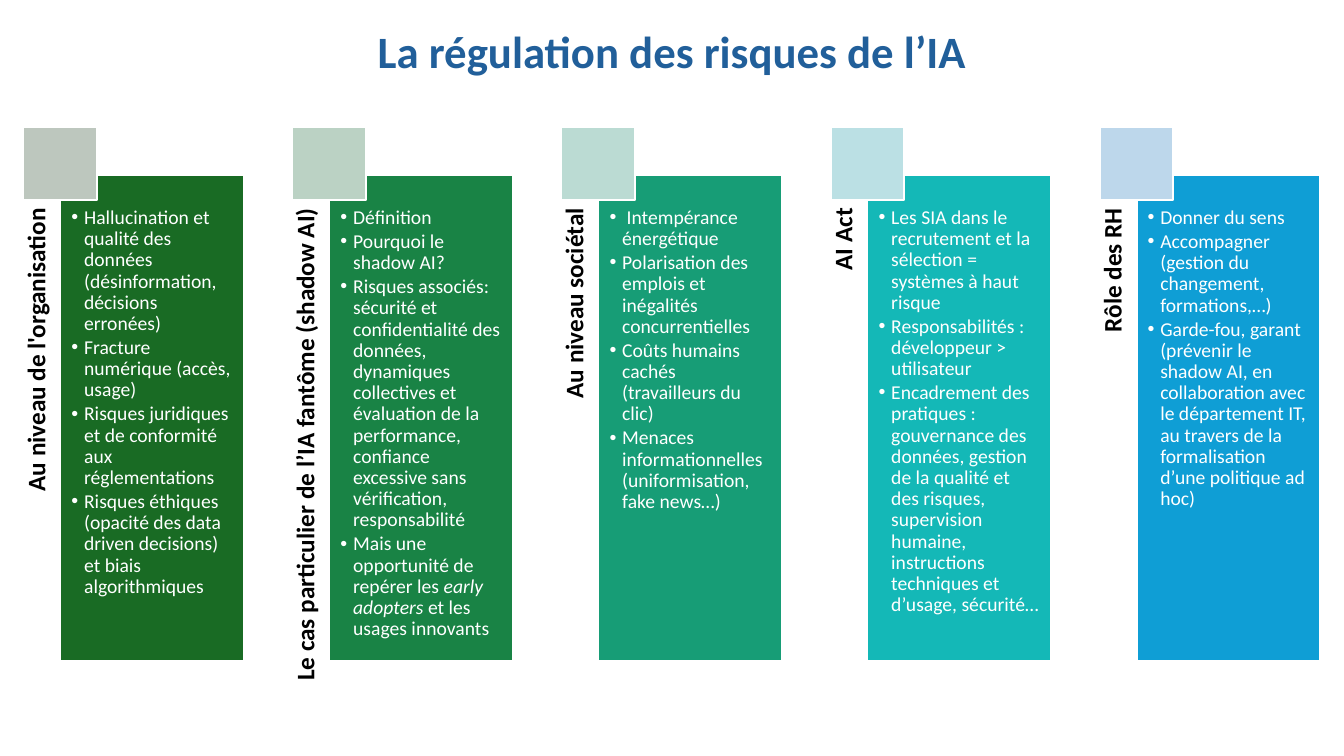
import dataclasses

import pptx
import pptx.dml.color
import pptx.enum.shapes
import pptx.enum.text
import pptx.util

Cm = pptx.util.Cm
Pt = pptx.util.Pt
Align = pptx.enum.text.PP_ALIGN
Anchor = pptx.enum.text.MSO_ANCHOR

PITCH = 6.78
WHITE = "FFFFFF"


@dataclasses.dataclass
class Column:
    label: str
    fill: str
    tint: str
    items: list[str]


COLUMNS = [
    Column("Au niveau de l'organisation", "196B24", "BDC7BE", [
        "Hallucination et qualité des données (désinformation, décisions erronées)",
        "Fracture numérique (accès, usage)",
        "Risques juridiques et de conformité aux réglementations",
        "Risques éthiques (opacité des data driven decisions) et biais algorithmiques",
    ]),
    Column("Le cas particulier de l’IA fantôme (shadow AI)", "198345", "BBD2C4", [
        "Définition",
        "Pourquoi le shadow AI?",
        "Risques associés: sécurité et confidentialité des données, dynamiques "
        "collectives et évaluation de la performance, confiance excessive sans "
        "vérification, responsabilité",
        "Mais une opportunité de repérer les *early adopters *et les usages innovants",
    ]),
    Column("Au niveau sociétal", "179D76", "BBDBD3", [
        " Intempérance énergétique",
        "Polarisation des emplois et inégalités concurrentielles",
        "Coûts humains cachés (travailleurs du clic)",
        "Menaces informationnelles (uniformisation, fake news…)",
    ]),
    Column("AI Act", "14B8B7", "BBE0E4", [
        "Les SIA dans le recrutement et la sélection = systèmes à haut risque",
        "Responsabilités : développeur > utilisateur",
        "Encadrement des pratiques : gouvernance des données, gestion de la qualité "
        "et des risques, supervision humaine, instructions techniques et d’usage, "
        "sécurité…",
    ]),
    Column("Rôle des RH", "0F9ED5", "BDD7EB", [
        "Donner du sens",
        "Accompagner (gestion du changement, formations,…)",
        "Garde-fou, garant (prévenir le shadow AI, en collaboration avec le "
        "département IT, au travers de la formalisation d’une politique ad hoc)",
    ]),
]


def tone(code: str) -> pptx.dml.color.RGBColor:
    return pptx.dml.color.RGBColor.from_string(code)


def place(shape, left: float, top: float, width: float, height: float) -> None:
    shape.left, shape.top = Cm(left), Cm(top)
    shape.width, shape.height = Cm(width), Cm(height)


def paint(shape, fill: str) -> None:
    shape.fill.solid()
    shape.fill.fore_color.rgb = tone(fill)
    shape.line.color.rgb = tone(WHITE)
    shape.line.width = Pt(1.5)


def frame(shape, left: float, top: float, right: float, base: float,
          anchor=Anchor.TOP):
    text = shape.text_frame
    text.word_wrap = True
    text.auto_size = pptx.enum.text.MSO_AUTO_SIZE.NONE
    text.vertical_anchor = anchor
    text.margin_left, text.margin_top = Cm(left), Cm(top)
    text.margin_right, text.margin_bottom = Cm(right), Cm(base)
    return text


def write(par, words: str, size: int, color: str, align, bold: bool = False) -> None:
    par.alignment = align
    par.line_spacing = 0.9
    par.space_before = Pt(0)
    for rank, part in enumerate(words.split("*")):
        run = par.add_run()
        run.text = part
        run.font.name = "Calibri"
        run.font.size = Pt(size)
        run.font.bold = bold
        run.font.italic = rank % 2 == 1
        run.font.color.rgb = tone(color)


def add_label(slide, words: str, shift: float) -> None:
    box = slide.shapes.add_textbox(0, 0, 0, 0)
    place(box, shift - 5.41, 10.44, 12.95, 0.94)
    box.rotation = 270
    text = frame(box, 0, 0, 0.81, 0)
    write(text.paragraphs[0], words, 18, "000000", Align.RIGHT, True)


def add_list(slide, model, column: Column, shift: float) -> None:
    slide.shapes.clone_placeholder(model)
    body = slide.shapes[-1]
    place(body, shift + 1.52, 4.42, 4.62, 12.24)
    paint(body, column.fill)
    text = frame(body, 0.28, 0.81, 0.28, 0.28)
    for rank, item in enumerate(column.items):
        par = text.add_paragraph() if rank else text.paragraphs[0]
        props = par._p.get_or_add_pPr()
        props.set("marL", str(Cm(0.32)))
        props.set("indent", str(Cm(-0.32)))
        par.space_after = Pt(2)
        write(par, item, 14, WHITE, Align.LEFT)


def add_square(slide, tint: str, shift: float) -> None:
    kind = pptx.enum.shapes.MSO_SHAPE.RECTANGLE
    square = slide.shapes.add_shape(kind, 0, 0, 0, 0)
    place(square, shift + 0.59, 3.2, 1.85, 1.85)
    square.shadow.inherit = False
    paint(square, tint)


def main() -> None:
    deck = pptx.Presentation()
    deck.slide_width, deck.slide_height = Cm(33.87), Cm(19.05)
    layout = deck.slide_layouts[1]
    slide = deck.slides.add_slide(layout)

    title = slide.shapes.title
    place(title, 0, 0.41, 33.87, 1.9)
    text = frame(title, 0.25, 0.13, 0.25, 0.13, Anchor.MIDDLE)
    write(text.paragraphs[0], "La régulation des risques de l’IA", 32, "215F9A",
          Align.CENTER, True)

    spare = slide.placeholders[1].element
    spare.getparent().remove(spare)
    model = layout.placeholders[1]
    for rank, column in enumerate(COLUMNS):
        shift = rank * PITCH
        add_label(slide, column.label, shift)
        add_list(slide, model, column, shift)
        add_square(slide, column.tint, shift)

    deck.save("out.pptx")


if __name__ == "__main__":
    main()
